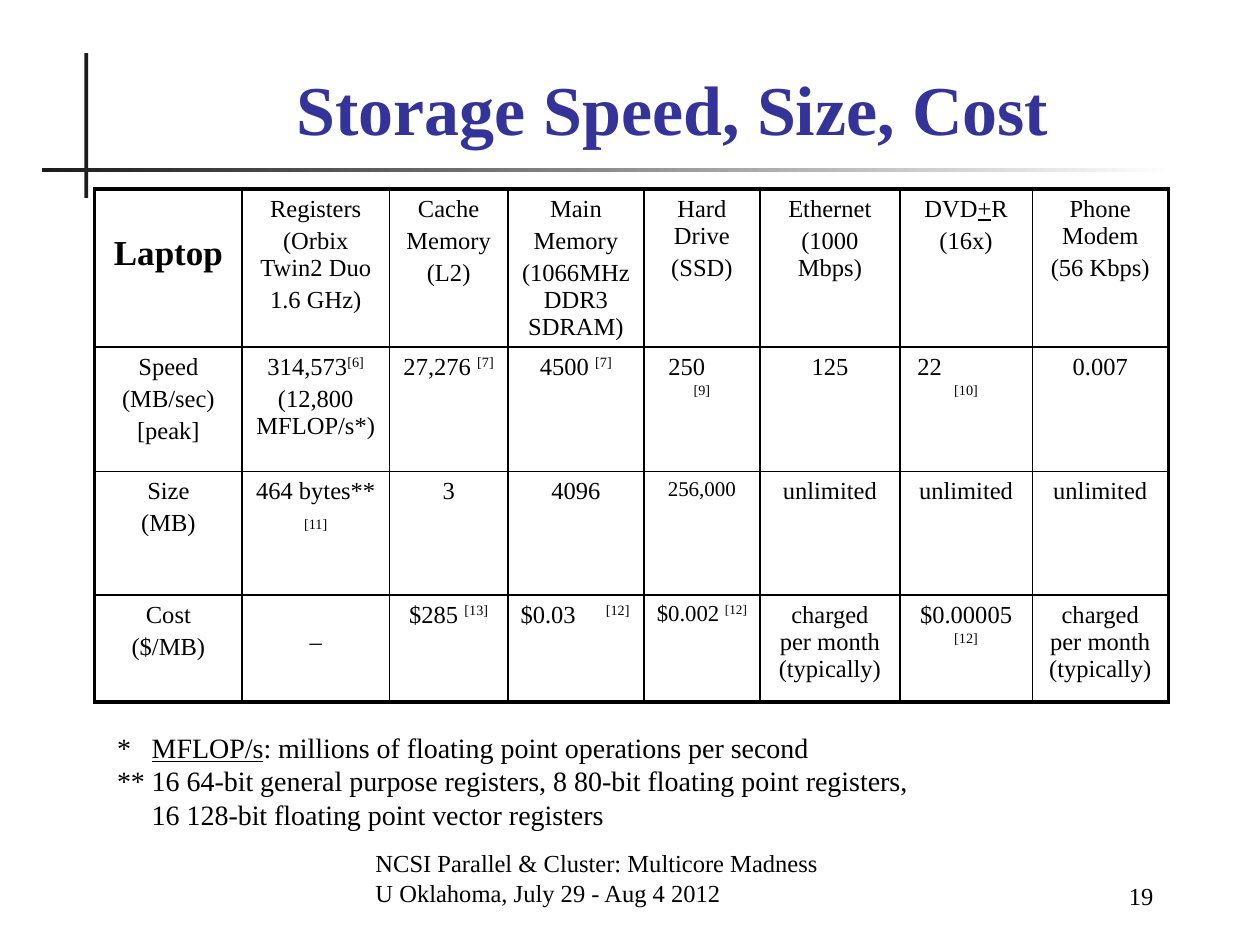
"""Build the slide comparing storage speed, size and cost on a laptop."""
from pptx import Presentation, util as u
from pptx.dml.color import RGBColor
from pptx.enum import shapes, text
from pptx.oxml import parse_xml
from pptx.oxml.ns import nsdecls

FONT = "Times New Roman"
LEFT, CENTER, RIGHT = text.PP_ALIGN.LEFT, text.PP_ALIGN.CENTER, text.PP_ALIGN.RIGHT


def color(value):
    """Return the colour for a hex string."""
    return RGBColor.from_string(value)


def write(paragraph, markup, **formats):
    """Add runs split at |, where a leading ^ raises and a leading _ underlines."""
    values = {"name": FONT, "size": u.Pt(14), "bold": False, **formats}
    for part in markup.split("|"):
        run = paragraph.add_run()
        run.text = part.lstrip("^_")
        for name, value in values.items():
            setattr(run.font, name, value)
        run.font.color.rgb = color("000000")
        if part.startswith("^"):
            run._r.get_or_add_rPr().set("baseline", "30000")
        if part.startswith("_"):
            run.font.underline = True


presentation = Presentation()
presentation.slide_width, presentation.slide_height = u.Cm(25.4), u.Cm(19.05)
slide = presentation.slides.add_slide(presentation.slide_layouts[5])

title = slide.shapes.title
title_place = {"left": 2.74, "top": 1.27, "width": 21.64, "height": 1.88}
for name, value in title_place.items():
    setattr(title, name, u.Cm(value))
title.text_frame.text = "Storage Speed, Size, Cost"
title.text_frame.auto_size = text.MSO_AUTO_SIZE.NONE
title.text_frame.vertical_anchor = text.MSO_ANCHOR.BOTTOM
title_paragraph = title.text_frame.paragraphs[0]
title_paragraph.alignment = CENTER
title_format = {"name": FONT, "size": u.Pt(40), "bold": True}
for name, value in title_format.items():
    setattr(title_paragraph.font, name, value)
title_paragraph.font.color.rgb = color("333399")

rules = []
for place in ((1.7, 1.07, 0.08, 2.92), (0.84, 3.38, 22.86, 0.08)):
    rule = slide.shapes.add_shape(shapes.MSO_SHAPE.RECTANGLE, *map(u.Cm, place))
    rule.shadow.inherit = False
    rule.line.fill.background()
    rules.append(rule)
vertical_rule, horizontal_rule = rules
vertical_rule.fill.solid()
vertical_rule.fill.fore_color.rgb = color("1C1C1C")
horizontal_rule.fill.gradient()
horizontal_rule.fill.gradient_angle = 0
for stop, value in zip(horizontal_rule.fill.gradient_stops, ("1C1C1C", "FFFFFF")):
    stop.color.rgb = color(value)

rows = [
    ["Laptop", "Registers\n(Orbix Twin2 Duo\n1.6 GHz)", "Cache\nMemory\n(L2)",
     "Main\nMemory\n(1066MHz DDR3 SDRAM)", "Hard Drive\n(SSD)",
     "Ethernet\n(1000 Mbps)", "DVD|_+|R\n(16x)", "Phone Modem\n(56 Kbps)"],
    ["Speed\n(MB/sec)\n[peak]", "314,573|^[6]\n(12,800 MFLOP/s*)", "27,276 |^[7]",
     "4500 |^[7]", "250\n^[9]", "125", "22\n^[10]", "0.007"],
    ["Size\n(MB)", "464 bytes**\n^[11]", "3", "4096", "256,000",
     "unlimited", "unlimited", "unlimited"],
    ["Cost\n($/MB)", "–", "$285 |^[13]", "$0.03\t|^[12]", "$0.002 |^[12]",
     "charged\nper month\n(typically)", "$0.00005 |^[12]",
     "charged per month (typically)"],
]
column_widths = [2.97, 2.97, 2.39, 2.74, 2.34, 2.82, 2.67, 2.74]
row_heights = [3.15, 2.51, 2.49, 2.16]
run_formats = {(0, 0): {"size": u.Pt(20), "bold": True},
               (2, 4): {"size": u.Pt(12)}, (3, 4): {"size": u.Pt(13)}}
top_margins = {(0, 0): 0.92, (3, 1): 0.68}
left_indents = {(1, 4): 0.24, (1, 6): 0.1, (3, 3): 0}
later_spacing = {(2, 1): 1.2, (3, 5): 0.8}

frame = slide.shapes.add_table(len(rows), len(column_widths), u.Cm(1.91), u.Cm(3.81),
                               u.Cm(sum(column_widths)), u.Cm(sum(row_heights)))
table = frame.table
table.first_row = table.horz_banding = False
for column, width in zip(table.columns, column_widths):
    column.width = u.Cm(width)
for row, height in zip(table.rows, row_heights):
    row.height = u.Cm(height)

for i, row in enumerate(rows):
    for j, content in enumerate(row):
        cell = table.cell(i, j)
        outer_sides = {"L": j == 0, "R": j == len(row) - 1,
                       "T": i == 0, "B": i == len(rows) - 1}
        properties = cell._tc.get_or_add_tcPr()
        for side, outer in outer_sides.items():
            properties.append(parse_xml(
                f'<a:ln{side} {nsdecls("a")} w="{u.Pt(2.25 if outer else 1)}">'
                f'<a:solidFill><a:srgbClr val="000000"/></a:solidFill></a:ln{side}>'))
        cell.fill.background()
        cell.margin_top = u.Cm(top_margins.get((i, j), 0.13))
        for k, line in enumerate(content.split("\n")):
            paragraph = cell.text_frame.paragraphs[0] if k == 0 else cell.text_frame.add_paragraph()
            paragraph.alignment = CENTER
            indented = (i, j) in left_indents
            if k and not indented:
                paragraph.space_before = u.Pt(2.8)
            if k and (i, j) in later_spacing:
                paragraph.line_spacing = later_spacing[i, j]
            if k == 0 and indented:
                paragraph.alignment = LEFT
                paragraph_properties = paragraph._p.get_or_add_pPr()
                paragraph_properties.set("marL", str(u.Cm(left_indents[i, j])))
                if "\t" in line:
                    paragraph_properties.append(parse_xml(
                        f'<a:tabLst {nsdecls("a")}><a:tab pos="{u.Cm(1.72)}" algn="l"/></a:tabLst>'))
            write(paragraph, line, **run_formats.get((i, j), {}))

footnotes = ["*\t|_MFLOP/s|: millions of floating point operations per second",
             "**\t16 64-bit general purpose registers, 8 80-bit floating point registers,",
             "16 128-bit floating point vector registers"]
footer = ["NCSI Parallel & Cluster: Multicore Madness", "U Oklahoma, July 29 - Aug 4 2012"]
TOP, BOTTOM = text.MSO_ANCHOR.TOP, text.MSO_ANCHOR.BOTTOM
boxes = [
    (footnotes, (2.11, 14.6, 16.71, 2.31), TOP, LEFT, 16, 19.2),
    (footer, (7.32, 17.15, 11.1, 1.27), BOTTOM, LEFT, 14, 17),
    (["19"], (19.89, 17.2, 3.61, 1.27), BOTTOM, RIGHT, 14, 17),
]
for lines, place, anchor, alignment, size, pitch in boxes:
    text_frame = slide.shapes.add_textbox(*map(u.Cm, place)).text_frame
    text_frame.word_wrap = True
    text_frame.vertical_anchor = anchor
    for k, line in enumerate(lines):
        paragraph = text_frame.paragraphs[0] if k == 0 else text_frame.add_paragraph()
        paragraph.alignment = alignment
        paragraph.line_spacing = u.Pt(pitch)
        if lines is footnotes:
            paragraph_properties = paragraph._p.get_or_add_pPr()
            paragraph_properties.set("marL", str(u.Cm(0.7)))
            paragraph_properties.set("indent", str(u.Cm(-0.7 if "\t" in line else 0)))
        write(paragraph, line, size=u.Pt(size))

presentation.save("out.pptx")
